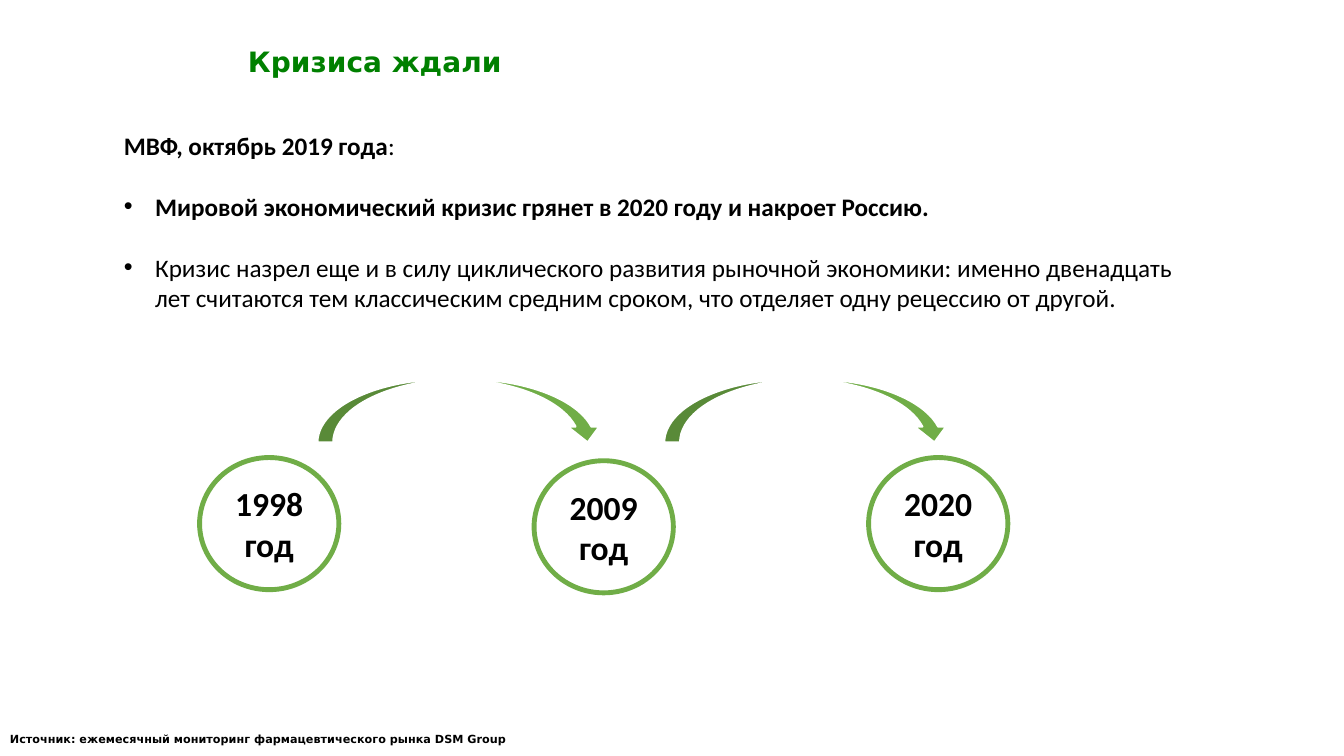
import pptx
import pptx.util
import pptx.dml.color
import pptx.enum.shapes
import pptx.enum.text
import pptx.oxml
import pptx.oxml.ns

Cm = pptx.util.Cm
Pt = pptx.util.Pt
SHAPES = pptx.enum.shapes.MSO_SHAPE
GREEN = "70AD47"
WHITE = "FFFFFF"
BLACK = "000000"
HEADING_FONT = "DejaVu Sans"
BODY_FONT = "Calibri"


def color(hex_value):
    return pptx.dml.color.RGBColor.from_string(hex_value)


def add_span(para, text, size, font, hex_value=BLACK, bold=True):
    span = para.add_run()
    span.text = text
    span.font.size = Pt(size)
    span.font.name = font
    span.font.bold = bold
    span.font.color.rgb = color(hex_value)


def add_text_box(page, left, top, width, height):
    box = page.shapes.add_textbox(Cm(left), Cm(top), Cm(width), Cm(height))
    box.text_frame.word_wrap = True
    return box.text_frame


def add_bullet(para, indent):
    properties = para._p.get_or_add_pPr()
    properties.set("marL", str(Cm(indent)))
    properties.set("indent", str(-Cm(indent)))
    for tag, name, value in (("buFont", "typeface", "Arial"), ("buChar", "char", "•")):
        bullet = pptx.oxml.parse_xml(f'<a:{tag} {pptx.oxml.ns.nsdecls("a")} {name}="{value}"/>')
        properties.append(bullet)


def add_shape(page, kind, left, top, width, height, fill, line, weight):
    shape = page.shapes.add_shape(kind, Cm(left), Cm(top), Cm(width), Cm(height))
    shape.shadow.inherit = False
    shape.fill.solid()
    shape.fill.fore_color.rgb = color(fill)
    shape.line.color.rgb = color(line)
    shape.line.width = Pt(weight)
    return shape


def add_heading(page, left, top, width, height, text, size, hex_value):
    frame = add_text_box(page, left, top, width, height)
    add_span(frame.paragraphs[0], text, size, HEADING_FONT, hex_value)


def add_forecast(page, left, top, width, height):
    frame = add_text_box(page, left, top, width, height)
    intro = frame.paragraphs[0]
    add_span(intro, "МВФ, октябрь 2019 года", 18, BODY_FONT)
    add_span(intro, ":", 18, BODY_FONT, bold=False)
    points = (
        ("Мировой экономический кризис грянет в 2020 году и накроет Россию.", True),
        ("Кризис назрел еще и в силу циклического развития рыночной экономики: "
         "именно двенадцать лет считаются тем классическим средним сроком, "
         "что отделяет одну рецессию от другой.", False),
    )
    for text, bold in points:
        para = frame.add_paragraph()
        para.space_before = Pt(22)
        add_bullet(para, 0.79)
        add_span(para, text, 18, BODY_FONT, bold=bold)


def add_year(page, left, top, year):
    circle = add_shape(page, SHAPES.FLOWCHART_CONNECTOR, left, top, 3.51, 3.33, WHITE, GREEN, 3.5)
    frame = circle.text_frame
    frame.word_wrap = True
    frame.vertical_anchor = pptx.enum.text.MSO_ANCHOR.MIDDLE
    para = frame.paragraphs[0]
    para.alignment = pptx.enum.text.PP_ALIGN.CENTER
    add_span(para, f"{year} год", 24, BODY_FONT)


def add_crisis_cycle(page, left, top):
    years = ((1998, 1.98), (2009, 2.06), (2020, 1.98))
    for index, (year, drop) in enumerate(years):
        add_year(page, left + index * 8.43, top + drop, year)
    for index in range(len(years) - 1):
        add_shape(page, SHAPES.CURVED_DOWN_ARROW, left + 2.97 + index * 8.74, top,
                  7.21, 1.6, GREEN, WHITE, 1.5)


def build_slide(deck):
    page = deck.slides.add_slide(deck.slide_layouts[6])
    add_heading(page, 0, 18.34, 16, 0.61,
                "Источник: ежемесячный мониторинг фармацевтического рынка DSM Group", 8, BLACK)
    add_heading(page, 6, 1, 20.57, 1.12, "Кризиса ждали", 20, "008000")
    add_forecast(page, 2.87, 3.15, 26.97, 6.4)
    add_crisis_cycle(page, 5.03, 9.55)


def main():
    deck = pptx.Presentation()
    deck.slide_width = Cm(33.87)
    deck.slide_height = Cm(19.05)
    build_slide(deck)
    deck.save("out.pptx")


if __name__ == "__main__":
    main()
